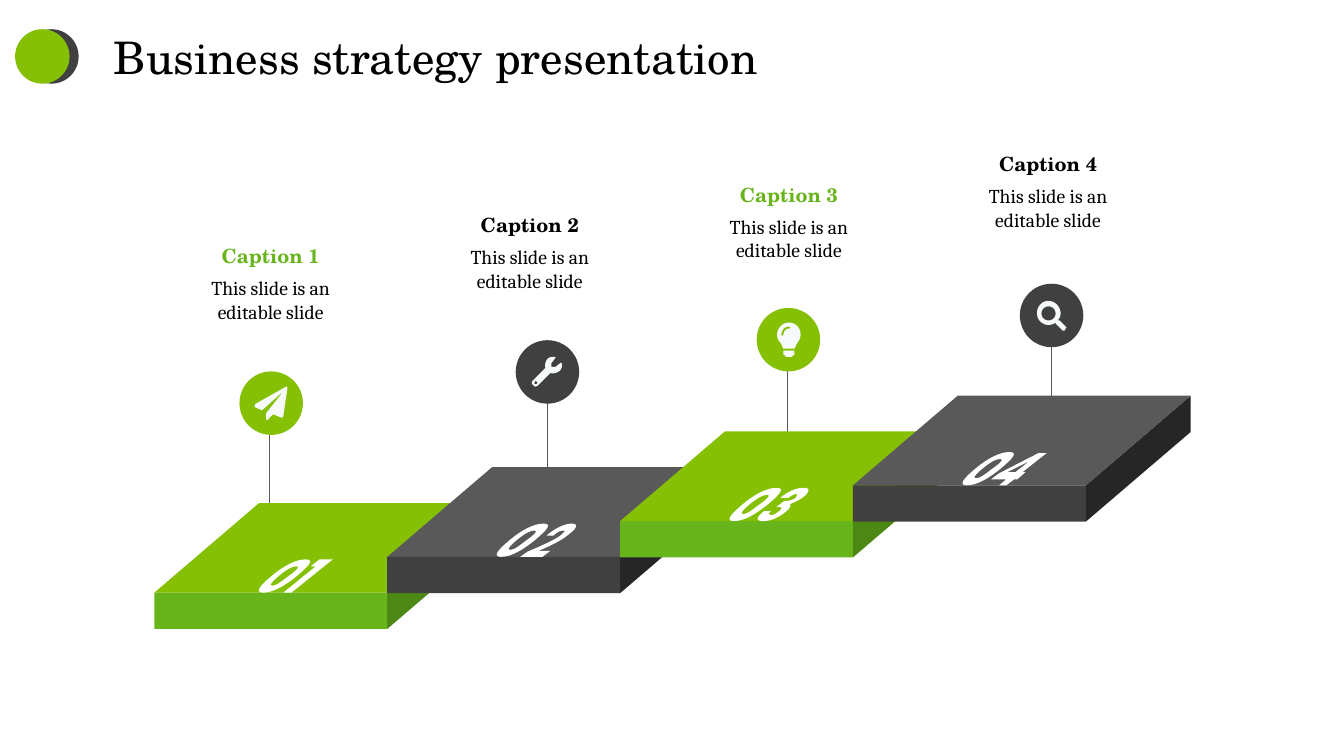
from dataclasses import dataclass

from lxml import etree
from pptx import Presentation
from pptx import util as u
from pptx.dml.color import RGBColor
from pptx.enum import shapes, text
from pptx.oxml import ns


@dataclass(frozen=True)
class Theme:
    lime: str = "85C004"
    green: str = "67B51B"
    moss: str = "4D8814"
    grey: str = "595959"
    charcoal: str = "404040"
    coal: str = "262626"
    ink: str = "000000"
    icon: str = "F6FAFA"
    white: str = "FFFFFF"
    heading_font: str = "TeX Gyre Schola"
    body_font: str = "Cambria"
    title_size: int = 32
    caption_size: int = 14


THEME = Theme()
BLOCK_COLOURS = [
    {"top": THEME.lime, "front": THEME.green, "side": THEME.moss},
    {"top": THEME.grey, "front": THEME.charcoal, "side": THEME.coal},
]
BLOCK_WIDTH, BLOCK_HEIGHT = 2.31, 0.36
BLOCK_SLANT, BLOCK_DEPTH = 1.04, 0.89
BADGE_SIZE = 0.63

PLANE = (
    "M 16 -14 L 12 13 C 11 14 11 15 10 14 L 9 14 L 2 11 L -3 16 C -3 17 -4 17 -5 16 "
    "L -5 15 L -5 10 L 10 -9 L 10 -10 L -9 7 L -16 4 C -16 3 -17 2 -16 2 "
    "L -16 1 L 14 -16 C 15 -17 16 -16 16 -16"
)
WRENCH = (
    "M 12 -1 C 9 1 6 2 3 1 L -9 13 C -11 15 -13 15 -14 13 C -16 12 -16 10 -14 8 "
    "L -2 -4 C -3 -7 -2 -10 0 -13 C 2 -15 5 -15 8 -15 L 8 -14 L 4 -9 L 4 -5 L 8 -5 "
    "L 13 -9 L 14 -9 C 15 -6 14 -3 12 -1 "
    "M -10 11 C -10 10 -11 9 -12 9 C -12 9 -13 10 -13 11 C -13 12 -12 12 -12 12 "
    "C -11 12 -10 12 -10 11"
)
BULB = (
    "M 0 -17 C 7 -17 12 -12 12 -5 C 12 -2 11 0 9 3 C 8 4 7 7 6 9 L -5 9 "
    "C -6 7 -7 4 -8 3 C -13 -2 -12 -10 -7 -14 C -5 -16 -2 -17 1 -17 "
    "M 2 -12 C 2 -12 1 -13 0 -13 C -4 -13 -7 -9 -7 -5 C -7 -4 -6 -4 -6 -4 "
    "C -5 -4 -5 -5 -5 -5 C -5 -8 -2 -11 0 -11 C 1 -11 2 -11 2 -12 "
    "M -5 11 L 6 11 L 6 14 L 6 15 L 4 16 C 4 17 3 17 3 17 L -2 17 "
    "C -2 17 -3 17 -3 16 L -5 15 L -5 14"
)
MAGNIFIER = (
    "M 14 13 L 13 15 C 12 15 11 15 11 15 L 5 9 C 4 9 4 8 4 8 L 4 7 "
    "C -1 11 -8 10 -12 5 C -16 0 -15 -8 -10 -12 C -5 -16 2 -15 6 -10 C 10 -5 10 1 6 5 "
    "L 7 5 L 8 5 L 14 11 C 15 12 15 12 14 13 "
    "M 4 -2 C 4 -6 1 -9 -3 -9 C -7 -9 -10 -6 -10 -2 C -10 2 -7 5 -3 5 C 1 5 4 2 4 -2"
)
ZERO = (
    "M 50 -33 C 59 -33 54 -27 42 -17 C 30 -7 18 0 8 0 C -1 0 5 -7 17 -17 "
    "C 29 -27 41 -33 50 -33 "
    "M 41 -26 C 36 -26 30 -22 24 -17 C 18 -12 13 -7 17 -7 C 22 -7 27 -12 34 -17 "
    "C 41 -22 45 -26 41 -26"
)
ONE = "M 60 -26 L 55 -26 L 64 -33 L 77 -33 L 36 0 L 28 0"
TWO = (
    "M 34 -5 C 48 -11 62 -17 68 -22 C 71 -25 72 -26 70 -26 C 66 -26 63 -24 60 -21 "
    "L 53 -21 C 62 -29 72 -33 78 -33 C 85 -33 83 -28 76 -23 C 68 -16 55 -10 45 -6 "
    "L 57 -6 L 49 0 L 27 0"
)
THREE = (
    "M 77 -33 C 84 -33 83 -29 77 -24 C 73 -21 69 -19 64 -17 L 63 -17 "
    "C 65 -16 64 -13 59 -9 C 53 -4 45 0 37 0 C 30 0 29 -3 38 -10 L 45 -10 "
    "C 42 -8 42 -6 45 -6 C 48 -6 50 -8 53 -10 C 56 -13 56 -14 52 -14 L 50 -14 "
    "L 58 -20 L 59 -20 C 63 -20 66 -21 69 -23 C 71 -26 71 -27 69 -27 "
    "C 67 -26 64 -25 62 -23 L 54 -23 C 61 -29 69 -33 77 -33"
)
FOUR = (
    "M 47 -6 L 32 -6 L 40 -12 L 79 -32 L 87 -32 L 63 -13 L 66 -13 L 58 -6 L 55 -6 "
    "L 47 0 L 40 0 M 56 -13 L 70 -24 L 48 -13"
)
STEPS = [
    {"icon": PLANE, "badge": (2.69, 4.0), "stem": (2.67, 5.39), "digit": ONE, "indent": 1.0},
    {"icon": WRENCH, "badge": (5.43, 3.69), "stem": (5.43, 5.4), "digit": TWO, "indent": 1.05},
    {"icon": BULB, "badge": (7.82, 3.37), "stem": (7.81, 4.72), "digit": THREE, "indent": 1.05},
    {"icon": MAGNIFIER, "badge": (10.43, 3.13), "stem": (10.43, 4.73), "digit": FOUR, "indent": 1.05},
]


def apply(target, values):
    for name, value in values.items():
        setattr(target, name, value)


def paint(shape, colour):
    shape.shadow.inherit = False
    shape.fill.solid()
    shape.fill.fore_color.rgb = RGBColor.from_string(colour)
    shape.line.fill.background()


def add_preset(slide, kind, box, colour):
    paint(slide.shapes.add_shape(kind, *map(u.Inches, box)), colour)


def curve_points(start, first, second, end, count=8):
    for number in range(1, count + 1):
        t = number / count
        weights = ((1 - t) ** 3, 3 * t * (1 - t) ** 2, 3 * t * t * (1 - t), t**3)
        yield tuple(
            sum(w * point[axis] for w, point in zip(weights, (start, first, second, end)))
            for axis in (0, 1)
        )


def outline_contours(outline):
    tokens = iter(outline.split())
    contours = []
    for command in tokens:
        count = 3 if command == "C" else 1
        points = [(float(next(tokens)), float(next(tokens))) for _ in range(count)]
        if command == "M":
            contours.append(points)
        elif command == "L":
            contours[-1] += points
        else:
            contours[-1] += curve_points(contours[-1][-1], *points)
    return contours


def add_outline(slide, contours, origin, unit, colour):
    placed = [
        [tuple(u.Inches(base + value * unit) for base, value in zip(origin, point)) for point in contour]
        for contour in contours
    ]
    builder = slide.shapes.build_freeform(*placed[0][0])
    for number, contour in enumerate(placed):
        if number:
            builder.move_to(*contour[0])
        builder.add_line_segments(contour[1:], close=True)
    paint(builder.convert_to_shape(), colour)


def write_span(para, words, font, size, colour, bold=False):
    span = para.add_run()
    span.text = words
    apply(span.font, {"name": font, "size": u.Pt(size), "bold": bold})
    span.font.color.rgb = RGBColor.from_string(colour)


def add_header(slide, left, top):
    for offset, colour in ((0.09, THEME.charcoal), (0, THEME.lime)):
        add_preset(slide, shapes.MSO_SHAPE.OVAL, (left + offset, top, 0.54, 0.54), colour)
    title = slide.shapes.title
    box = (left + 0.88, top - 0.05, 11.38, 0.64)
    apply(title, dict(zip(("left", "top", "width", "height"), map(u.Inches, box))))
    title.text_frame.auto_size = text.MSO_AUTO_SIZE.SHAPE_TO_FIT_TEXT
    para = title.text_frame.paragraphs[0]
    para.alignment = text.PP_ALIGN.LEFT
    write_span(para, "Business strategy presentation", THEME.heading_font, THEME.title_size, THEME.ink)


def add_badge(slide, centre, stem, icon, colour):
    x, bottom = stem
    points = map(u.Inches, (x, centre[1], x, bottom))
    line = slide.shapes.add_connector(shapes.MSO_CONNECTOR.STRAIGHT, *points)
    line.line.width = u.Pt(0.38)
    line.line.color.rgb = RGBColor.from_string(THEME.grey)
    etree.SubElement(line._element.spPr, ns.qn("a:effectLst"))
    left, top = (value - BADGE_SIZE / 2 for value in centre)
    add_preset(slide, shapes.MSO_SHAPE.OVAL, (left, top, BADGE_SIZE, BADGE_SIZE), colour)
    add_outline(slide, outline_contours(icon), centre, 0.01, THEME.icon)


def add_block(slide, left, top, colours, digit, indent):
    back, right = BLOCK_WIDTH + BLOCK_SLANT, BLOCK_WIDTH
    side = [(right, 0), (back, -BLOCK_DEPTH), (back, BLOCK_HEIGHT - BLOCK_DEPTH), (right, BLOCK_HEIGHT)]
    lid = [(0, 0), (BLOCK_SLANT, -BLOCK_DEPTH), (back, -BLOCK_DEPTH), (right, 0)]
    add_outline(slide, [side], (left, top), 1, colours["side"])
    add_outline(slide, [lid], (left, top), 1, colours["top"])
    front = (left, top, BLOCK_WIDTH, BLOCK_HEIGHT)
    add_preset(slide, shapes.MSO_SHAPE.RECTANGLE, front, colours["front"])
    for outline in (ZERO, digit):
        add_outline(slide, outline_contours(outline), (left + indent, top), 0.01, THEME.white)


def add_caption(slide, left, top, heading, colour):
    box = slide.shapes.add_textbox(*map(u.Inches, (left, top, 1.69, 0.79)))
    frame = box.text_frame
    apply(frame, dict.fromkeys(("margin_left", "margin_top", "margin_right", "margin_bottom"), 0))
    apply(frame, {"word_wrap": True, "auto_size": text.MSO_AUTO_SIZE.SHAPE_TO_FIT_TEXT})
    lines = (
        (heading, THEME.heading_font, THEME.caption_size, colour, True),
        ("This slide is an editable slide", THEME.body_font, THEME.caption_size, THEME.ink),
    )
    for para, line in zip((frame.paragraphs[0], frame.add_paragraph()), lines):
        apply(para, {"alignment": text.PP_ALIGN.CENTER, "space_before": u.Pt(6)})
        write_span(para, *line)


def add_staircase(slide, left, top):
    for index, step in enumerate(STEPS):
        colour = (THEME.lime, THEME.charcoal)[index % 2]
        add_badge(slide, step["badge"], step["stem"], step["icon"], colour)
    for index, step in enumerate(STEPS):
        block = (left + BLOCK_WIDTH * index, top - 0.355 * index)
        add_block(slide, *block, BLOCK_COLOURS[index % 2], step["digit"], step["indent"])
        colour = (THEME.green, THEME.ink)[index % 2]
        caption = (left + 0.31 + 2.57 * index, top - 3.46 - 0.303 * index)
        add_caption(slide, *caption, f"Caption {index + 1}", colour)


def main():
    deck = Presentation()
    apply(deck, {"slide_width": u.Inches(13.33), "slide_height": u.Inches(7.5)})
    slide = deck.slides.add_slide(deck.slide_layouts[5])
    add_header(slide, 0.15, 0.29)
    add_staircase(slide, 1.53, 5.88)
    deck.save("out.pptx")


if __name__ == "__main__":
    main()
